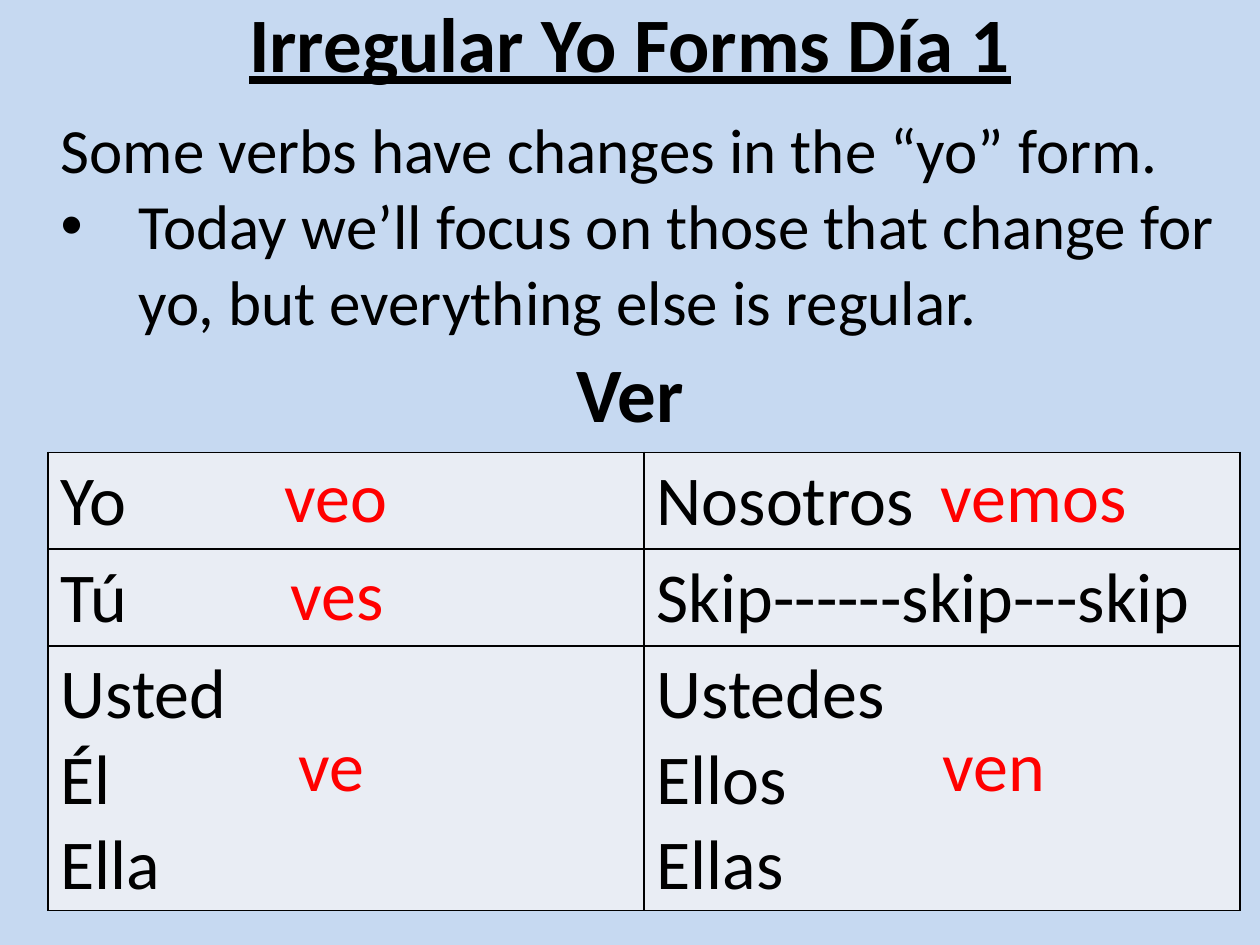
import pptx
import pptx.util
import pptx.dml.color
import pptx.enum.text
import pptx.oxml.ns
from lxml import etree

Cm, Pt = pptx.util.Cm, pptx.util.Pt
RGBColor = pptx.dml.color.RGBColor
PP_ALIGN = pptx.enum.text.PP_ALIGN
MSO_ANCHOR = pptx.enum.text.MSO_ANCHOR
qn = pptx.oxml.ns.qn

BACKGROUND = RGBColor(0xC6, 0xD9, 0xF1)
CELL_FILL = RGBColor(0xE9, 0xED, 0xF4)
BLACK = RGBColor(0, 0, 0)
RED = RGBColor(0xFF, 0, 0)

PRONOUNS = [
    [["Yo"], ["Nosotros"]],
    [["Tú"], ["Skip------skip---skip"]],
    [["Usted", "Él", "Ella"], ["Ustedes", "Ellos", "Ellas"]],
]
ROW_HEIGHTS = [1.95, 1.95, 5.33]
# Conjugated form, with its offset in cm from the table's corner
ANSWERS = [
    ("veo", 4.52, -0.13),
    ("ves", 4.64, 1.85),
    ("ve", 4.8, 5.31),
    ("vemos", 17.75, -0.13),
    ("ven", 17.78, 5.31),
]


def write_text(frame, lines, size=40, color=BLACK, bold=False, underline=False,
               align=PP_ALIGN.LEFT, anchor=None):
    frame.word_wrap = True
    if anchor is not None:
        frame.vertical_anchor = anchor
    for index, line in enumerate(lines):
        paragraph = frame.paragraphs[0] if index == 0 else frame.add_paragraph()
        paragraph.alignment = align
        paragraph.space_before = Pt(0)
        run = paragraph.add_run()
        run.text = line
        font = run.font
        font.name, font.size = "Calibri", Pt(size)
        font.bold, font.underline = bold, underline
        font.color.rgb = color


def set_bullet(paragraph, char=None, indent=0):
    properties = paragraph._p.get_or_add_pPr()
    properties.set("marL", str(Cm(indent)))
    properties.set("indent", str(-Cm(indent)))
    if char:
        etree.SubElement(properties, qn("a:buFont")).set("typeface", "Arial")
        etree.SubElement(properties, qn("a:buChar")).set("char", char)
    else:
        etree.SubElement(properties, qn("a:buNone"))


def set_borders(cell, color=BLACK, width=1):
    properties = cell._tc.get_or_add_tcPr()
    for side in ("lnL", "lnR", "lnT", "lnB"):
        line = etree.SubElement(properties, qn(f"a:{side}"), w=str(Pt(width)))
        fill = etree.SubElement(line, qn("a:solidFill"))
        etree.SubElement(fill, qn("a:srgbClr"), val=str(color))


def place(shape, left, top, width, height):
    shape.left, shape.top = Cm(left), Cm(top)
    shape.width, shape.height = Cm(width), Cm(height)


def add_title(slide, *box):
    title = slide.shapes.title
    place(title, *box)
    write_text(title.text_frame, ["Irregular Yo Forms Día 1"], size=44, bold=True,
               underline=True, align=PP_ALIGN.CENTER, anchor=MSO_ANCHOR.MIDDLE)


def add_explanation(slide, *box):
    explanation = slide.placeholders[1]
    place(explanation, *box)
    frame = explanation.text_frame
    frame.auto_size = pptx.enum.text.MSO_AUTO_SIZE.NONE
    write_text(frame, [
        "Some verbs have changes in the “yo” form.",
        "Today we’ll focus on those that change for yo, "
        "but everything else is regular.",
    ], size=36)
    set_bullet(frame.paragraphs[0])
    set_bullet(frame.paragraphs[1], "•", 1.57)


def add_verb(slide, *box):
    verb = slide.shapes.add_textbox(*map(Cm, box))
    write_text(verb.text_frame, ["Ver"], size=44, bold=True,
               align=PP_ALIGN.CENTER, anchor=MSO_ANCHOR.MIDDLE)


def add_conjugation(slide, left, top, width, height):
    # Pronoun grid
    grid = slide.shapes.add_table(len(PRONOUNS), 2, Cm(left), Cm(top),
                                  Cm(width), Cm(height)).table
    grid.first_row = grid.horz_banding = False
    for row, row_height, pronoun_row in zip(grid.rows, ROW_HEIGHTS, PRONOUNS):
        row.height = Cm(row_height)
        for cell, pronouns in zip(row.cells, pronoun_row):
            set_borders(cell)
            cell.fill.solid()
            cell.fill.fore_color.rgb = CELL_FILL
            write_text(cell.text_frame, pronouns)

    # Verb forms laid over the grid
    for form, dx, dy in ANSWERS:
        answer = slide.shapes.add_textbox(Cm(left + dx), Cm(top + dy),
                                          Cm(6.68), Cm(1.96))
        write_text(answer.text_frame, [form], color=RED)


def main():
    deck = pptx.Presentation()
    deck.slide_width, deck.slide_height = Cm(25.4), Cm(19.05)
    slide = deck.slides.add_slide(deck.slide_layouts[1])
    slide.background.fill.solid()
    slide.background.fill.fore_color.rgb = BACKGROUND

    add_title(slide, 0, -0.33, 25.4, 2.34)
    add_explanation(slide, 0.97, 2.11, 24.03, 4.88)
    add_verb(slide, 0, 6.73, 25.4, 2.34)
    add_conjugation(slide, 0.97, 9.12, 24.03, sum(ROW_HEIGHTS))
    deck.save("out.pptx")


if __name__ == "__main__":
    main()
